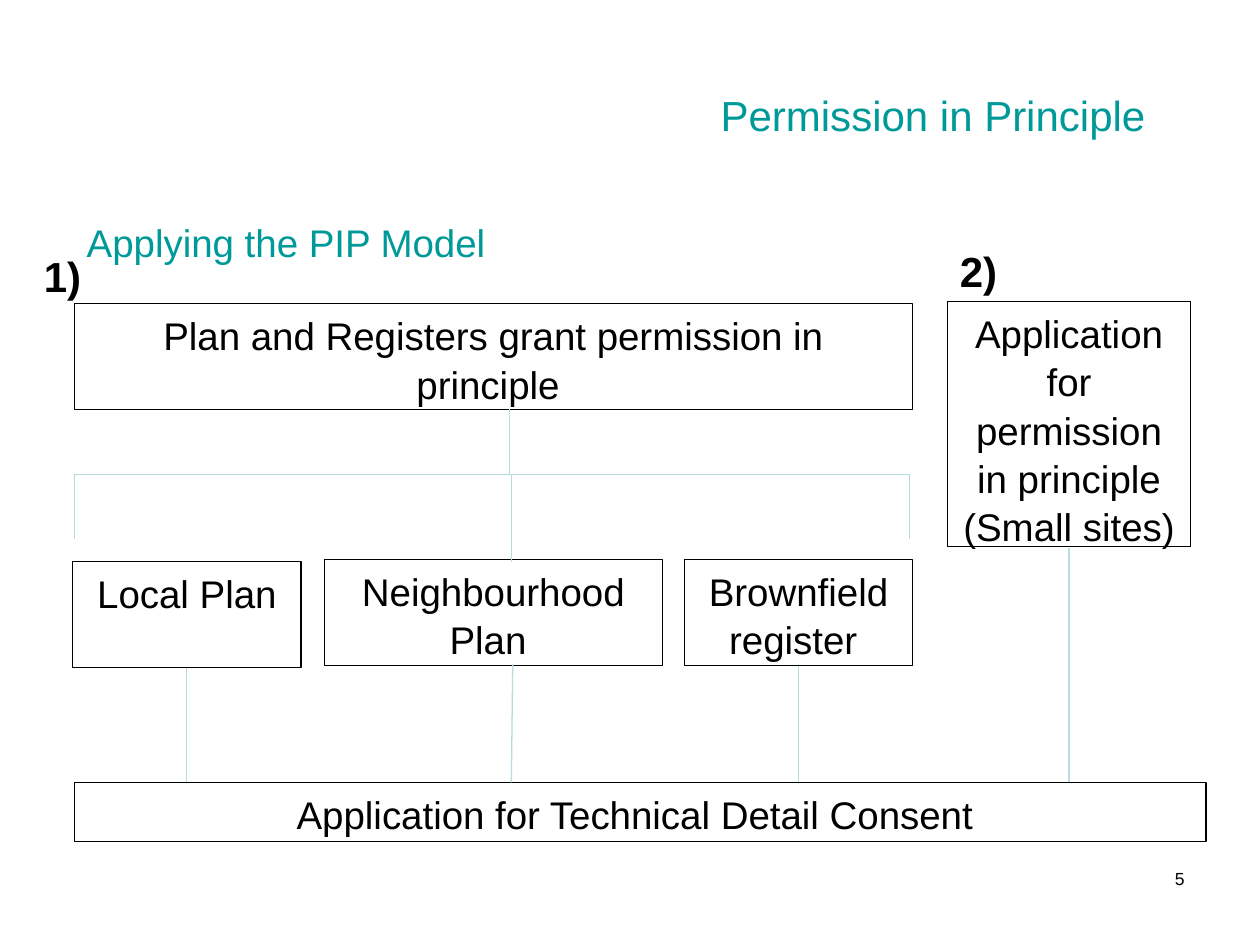
from pptx import Presentation
from pptx.dml.color import RGBColor
from pptx.enum.shapes import MSO_CONNECTOR, MSO_SHAPE as SHAPE
from pptx.enum.text import MSO_ANCHOR, PP_ALIGN as ALIGN
from pptx.oxml.ns import qn
from pptx.util import Pt
from lxml import etree

TEAL, PALE_TEAL, BLACK = "009999", "B6DCDF", "000000"


def color(hex_code):
    return RGBColor.from_string(hex_code)


def set_line(item, hex_code):
    item.line.color.rgb = color(hex_code)
    item.line.width = Pt(0.75)


def write(item, text, size, hex_code, align, bold=False):
    frame = item.text_frame
    frame.word_wrap = True
    frame.vertical_anchor = MSO_ANCHOR.TOP
    frame.text = text
    for paragraph in frame.paragraphs:
        paragraph.alignment = align
        paragraph.line_spacing = 1.05
        for run in paragraph.runs:
            run.font.name = "Arial"
            run.font.size = Pt(size)
            run.font.bold = bold
            run.font.color.rgb = color(hex_code)


def add_label(slide, box, text, size, hex_code=BLACK, align=ALIGN.LEFT, bold=False):
    label = slide.shapes.add_textbox(*map(Pt, box))
    write(label, text, size, hex_code, align, bold)


def add_outline(slide, preset, box, hex_code):
    outline = slide.shapes.add_shape(preset, *map(Pt, box))
    outline.shadow.inherit = False
    outline.fill.background()
    set_line(outline, hex_code)
    return outline


def add_step(slide, box, text):
    step = add_outline(slide, SHAPE.RECTANGLE, box, BLACK)
    write(step, text, 22, BLACK, ALIGN.CENTER)


def add_link(slide, x1, y1, x2, y2):
    link = slide.shapes.add_connector(MSO_CONNECTOR.STRAIGHT, *map(Pt, (x1, y1, x2, y2)))
    set_line(link, PALE_TEAL)
    etree.SubElement(link._element.spPr, qn("a:effectLst"))


def add_brace(slide, box, tip):
    brace = add_outline(slide, SHAPE.LEFT_BRACE, box, PALE_TEAL)
    brace.rotation = 90
    brace.adjustments[0] = 0
    brace.adjustments[1] = tip


def main():
    prs = Presentation()
    prs.slide_width, prs.slide_height = Pt(720), Pt(540)
    slide = prs.slides.add_slide(prs.slide_layouts[6])

    # Headings and page number
    add_label(slide, (516.2, 491.8, 167.8, 37.4), "5", 10, align=ALIGN.RIGHT)
    add_label(slide, (206.6, 46.1, 455, 74.2), "Permission in Principle", 24, TEAL, ALIGN.RIGHT)
    add_label(slide, (42.5, 120.2, 329, 33.8), "Applying the PIP Model", 22, TEAL)

    # Two routes to permission in principle
    add_step(slide, (42.5, 173.5, 478.8, 60.5),
             "Plan and Registers grant permission in principle ")
    add_step(slide, (541.4, 172.1, 139, 140.4),
             "Application for permission in principle\n(Small sites)")

    # Plans and register below the first route
    for left, top, width, text in [
        (41.5, 321, 130.6, "Local Plan"),
        (185.4, 319.7, 193, "Neighbourhood Plan "),
        (391, 319.7, 130.6, "Brownfield register "),
    ]:
        add_step(slide, (left, top, width, 60.5), text)
    add_brace(slide, (244.1, 32.4, 74.2, 477.4), 0.479)

    # Shared final step
    consent_top = 447.1
    add_step(slide, (42.5, consent_top, 646.6, 33.8),
             "Application for Technical Detail Consent ")

    # Links down to the final step, and from the brace to the middle plan
    for start_x, start_y, end_x in [
        (106.7, 381.6, 106.7),
        (293, 379.6, 292.2),
        (456.3, 380.8, 456.3),
        (610.8, 313, 610.8),
    ]:
        add_link(slide, start_x, start_y, end_x, consent_top)
    add_link(slide, 292.2, 271.4, 292.2, 321)

    # Route numbers
    add_label(slide, (18, 138.2, 39.6, 36), "1)", 24, bold=True)
    add_label(slide, (541.4, 135.4, 51.1, 36.7), "2)", 24, bold=True)

    prs.save("out.pptx")


if __name__ == "__main__":
    main()
